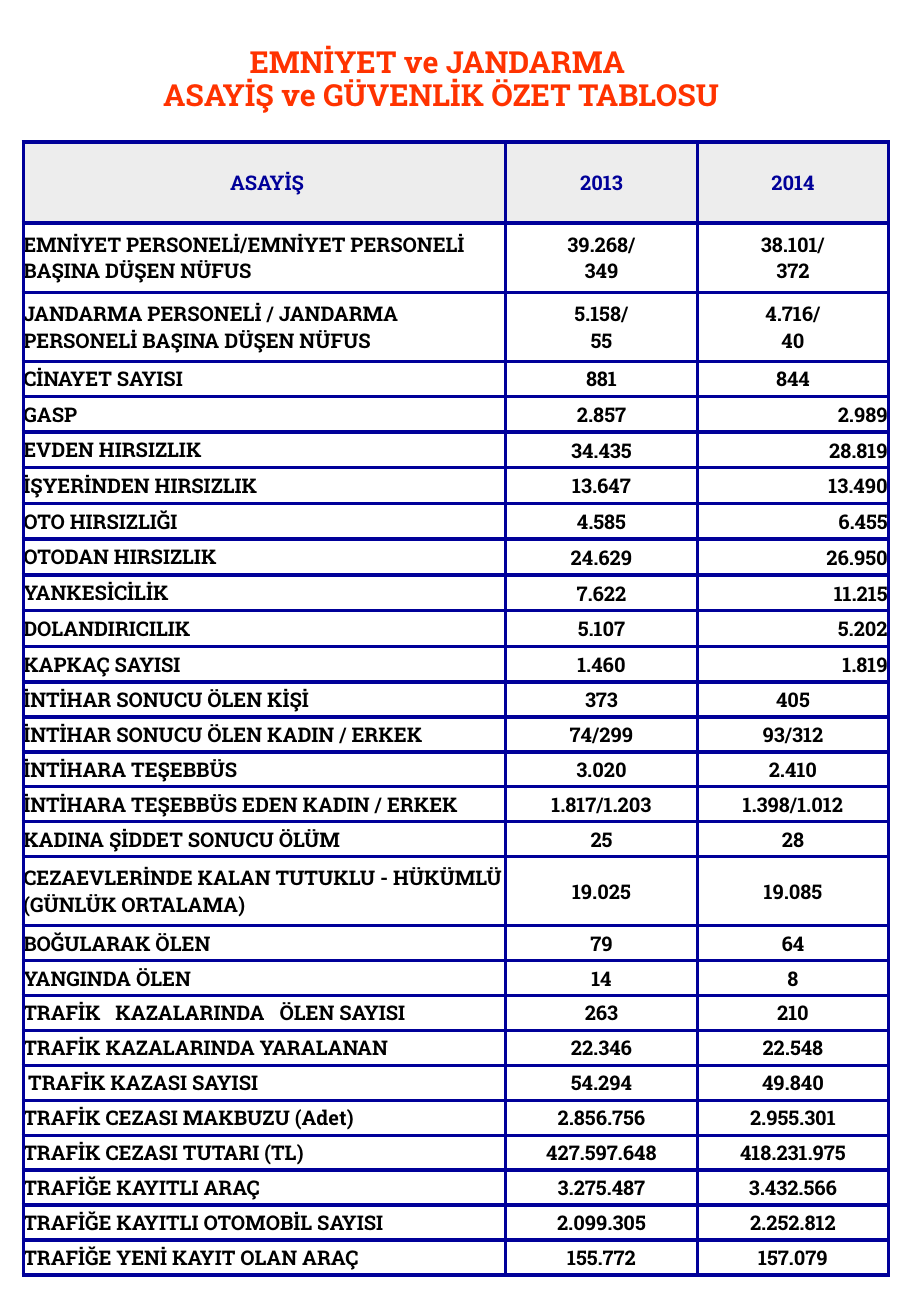
from lxml.etree import SubElement as Sub
from pptx import Presentation
from pptx.dml.color import RGBColor as RGB
from pptx.enum.text import MSO_ANCHOR as Anchor, MSO_AUTO_SIZE as Auto, PP_ALIGN as Align
from pptx.oxml.ns import qn
from pptx.util import Pt

FONT = "Roboto Slab"
HUE = {"title": "FF3300", "navy": "000099", "head": "EDEDED", "ink": "000000", "white": "FFFFFF"}
HEAD = (" ASAYİŞ", "2013", "2014")
STAFF = [
    ("EMNİYET PERSONELİ/EMNİYET PERSONELİ BAŞINA DÜŞEN NÜFUS", "39.268/\n349", "38.101/\n372"),
    ("JANDARMA PERSONELİ / JANDARMA PERSONELİ BAŞINA DÜŞEN NÜFUS", "5.158/\n55", "4.716/\n40"),
]
DEATH = [("CİNAYET SAYISI", "881", "844")]
THEFT = [
    ("GASP", "2.857", "2.989"),
    ("EVDEN HIRSIZLIK", "34.435", "28.819"),
    ("İŞYERİNDEN HIRSIZLIK", "13.647", "13.490"),
    ("OTO HIRSIZLIĞI", "4.585", "6.455"),
    ("OTODAN HIRSIZLIK", "24.629", "26.950"),
    ("YANKESİCİLİK", "7.622", "11.215"),
    ("DOLANDIRICILIK", "5.107", "5.202"),
    ("KAPKAÇ SAYISI", "1.460", "1.819"),
]
HARM = [
    ("İNTİHAR SONUCU ÖLEN KİŞİ", "373", "405"),
    ("İNTİHAR SONUCU ÖLEN KADIN / ERKEK", "74/299", "93/312"),
    ("İNTİHARA TEŞEBBÜS", "3.020", "2.410"),
    ("İNTİHARA TEŞEBBÜS EDEN KADIN / ERKEK", "1.817/1.203", "1.398/1.012"),
    ("KADINA ŞİDDET SONUCU ÖLÜM", "25", "28"),
]
JAIL = [("CEZAEVLERİNDE KALAN TUTUKLU - HÜKÜMLÜ (GÜNLÜK ORTALAMA)", "19.025", "19.085")]
ROAD = [
    ("BOĞULARAK ÖLEN", "79", "64"),
    ("YANGINDA ÖLEN", "14", "8"),
    ("TRAFİK   KAZALARINDA   ÖLEN SAYISI", "263", "210"),
    ("TRAFİK KAZALARINDA YARALANAN", "22.346", "22.548"),
    (" TRAFİK KAZASI SAYISI", "54.294", "49.840"),
    ("TRAFİK CEZASI MAKBUZU (Adet)", "2.856.756", "2.955.301"),
    ("TRAFİK CEZASI TUTARI (TL)", "427.597.648", "418.231.975"),
    ("TRAFİĞE KAYITLI ARAÇ", "3.275.487", "3.432.566"),
    ("TRAFİĞE KAYITLI OTOMOBİL SAYISI", "2.099.305", "2.252.812"),
    ("TRAFİĞE YENİ KAYIT OLAN ARAÇ", "155.772", "157.079"),
]
TALL, THIN, LOOSE = 41, 20.7, 21.2
GROUPS = [(STAFF, TALL), (DEATH, THIN), (THEFT, LOOSE), (HARM, THIN), (JAIL, TALL), (ROAD, THIN)]


def add_run(para, text, size, hue):
    """Add one bold run to a paragraph."""
    run = para.add_run()
    run.text = text
    font = run.font
    font.name, font.size, font.bold = FONT, Pt(size), True
    font.color.rgb = RGB.from_string(HUE[hue])


def add_title(slide, left, top, width, height):
    """Place the two-line heading in the title placeholder."""
    title = slide.shapes.title
    title.left, title.top, title.width, title.height = map(Pt, (left, top, width, height))
    frame = title.text_frame
    frame.word_wrap, frame.auto_size = True, Auto.NONE
    frame.vertical_anchor = Anchor.TOP
    para = frame.paragraphs[0]
    para.alignment, para.line_spacing = Align.CENTER, 0.92
    add_run(para, "EMNİYET ve JANDARMA ", 18, "title")
    para.add_line_break()
    add_run(para, "ASAYİŞ ve GÜVENLİK ÖZET TABLOSU", 18, "title")


def add_rules(cell):
    """Draw navy borders on all four sides of a cell."""
    props = cell._tc.get_or_add_tcPr()
    for side in ("a:lnL", "a:lnR", "a:lnT", "a:lnB"):
        line = Sub(props, qn(side), w=str(Pt(2.25)))
        fill = Sub(line, qn("a:solidFill"))
        Sub(fill, qn("a:srgbClr"), val=HUE["navy"])


def fill_cell(cell, text, hue, back, align, pad):
    """Write and format one table cell."""
    add_rules(cell)
    cell.margin_left = cell.margin_right = cell.margin_top = Pt(pad)
    cell.margin_bottom = 0
    cell.vertical_anchor = Anchor.MIDDLE
    if back:
        cell.fill.solid()
        cell.fill.fore_color.rgb = RGB.from_string(HUE[back])
    else:
        cell.fill.background()
    frame = cell.text_frame
    for num, line in enumerate(text.split("\n")):
        para = frame.add_paragraph() if num else frame.paragraphs[0]
        para.alignment = align
        add_run(para, line, 12, hue)


def add_grid(slide, left, top, width):
    """Place the summary table with its header and grouped rows."""
    rows = [(row, high, group is THEFT) for group, high in GROUPS for row in group]
    highs = [48] + [high for _, high, _ in rows]
    box = map(Pt, (left, top, width, sum(highs)))
    grid = slide.shapes.add_table(len(highs), len(HEAD), *box).table
    grid.first_row = grid.horz_banding = False
    year = 113.5
    for col, wide in zip(grid.columns, (width - 2 * year, year, year)):
        col.width = Pt(wide)
    for line, high in zip(grid.rows, highs):
        line.height = Pt(high)
    for col, text in enumerate(HEAD):
        fill_cell(grid.cell(0, col), text, "navy", "head", Align.CENTER, 0)
    for num, (row, _, theft) in enumerate(rows, 1):
        last = Align.RIGHT if theft else Align.CENTER
        pad = 0.6 if theft else 0
        fill_cell(grid.cell(num, 0), row[0], "ink", None, Align.LEFT, 0)
        fill_cell(grid.cell(num, 1), row[1], "ink", "white", Align.CENTER, pad)
        fill_cell(grid.cell(num, 2), row[2], "ink", "white", last, pad)


def main():
    """Build the slide and save it."""
    deck = Presentation()
    deck.slide_width, deck.slide_height = Pt(540), Pt(780)
    slide = deck.slides.add_slide(deck.slide_layouts[5])
    add_grid(slide, 13.8, 84.2, 513)
    add_title(slide, 5, 23.8, 513, 51)
    deck.save("out.pptx")


if __name__ == "__main__":
    main()
